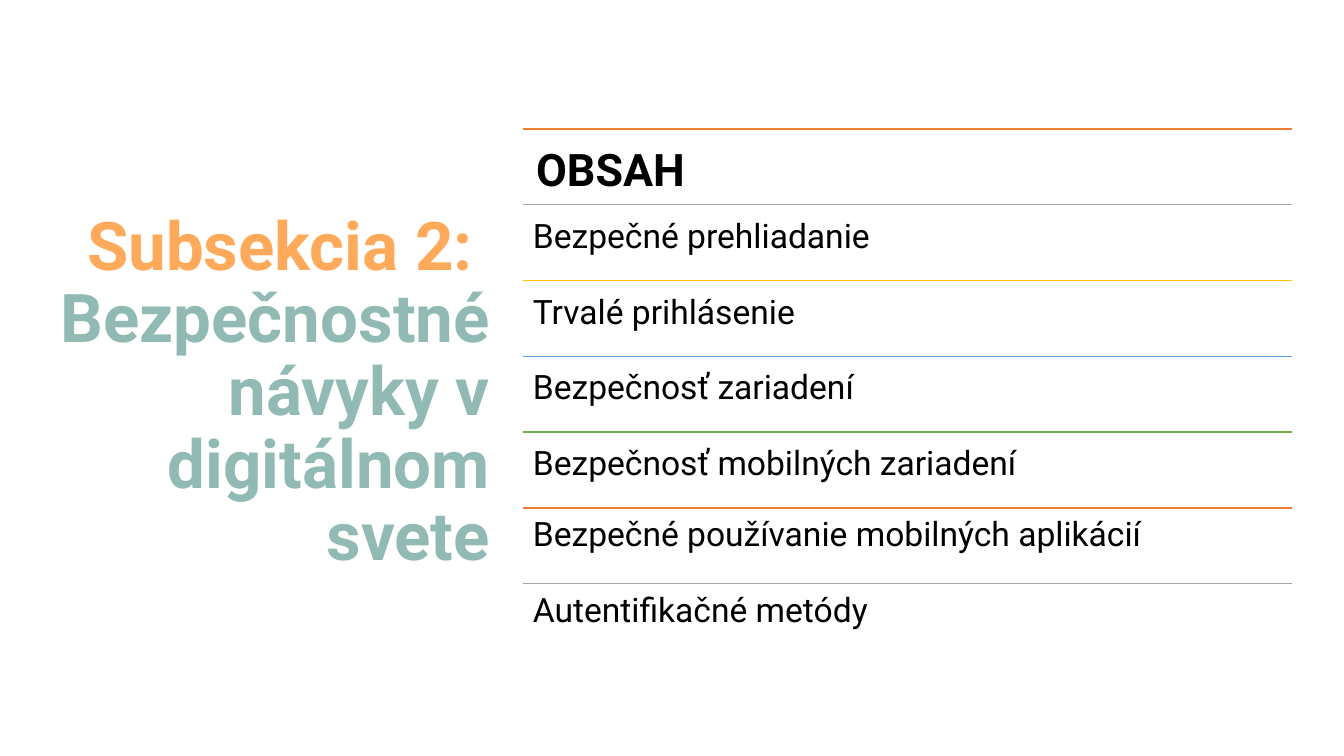
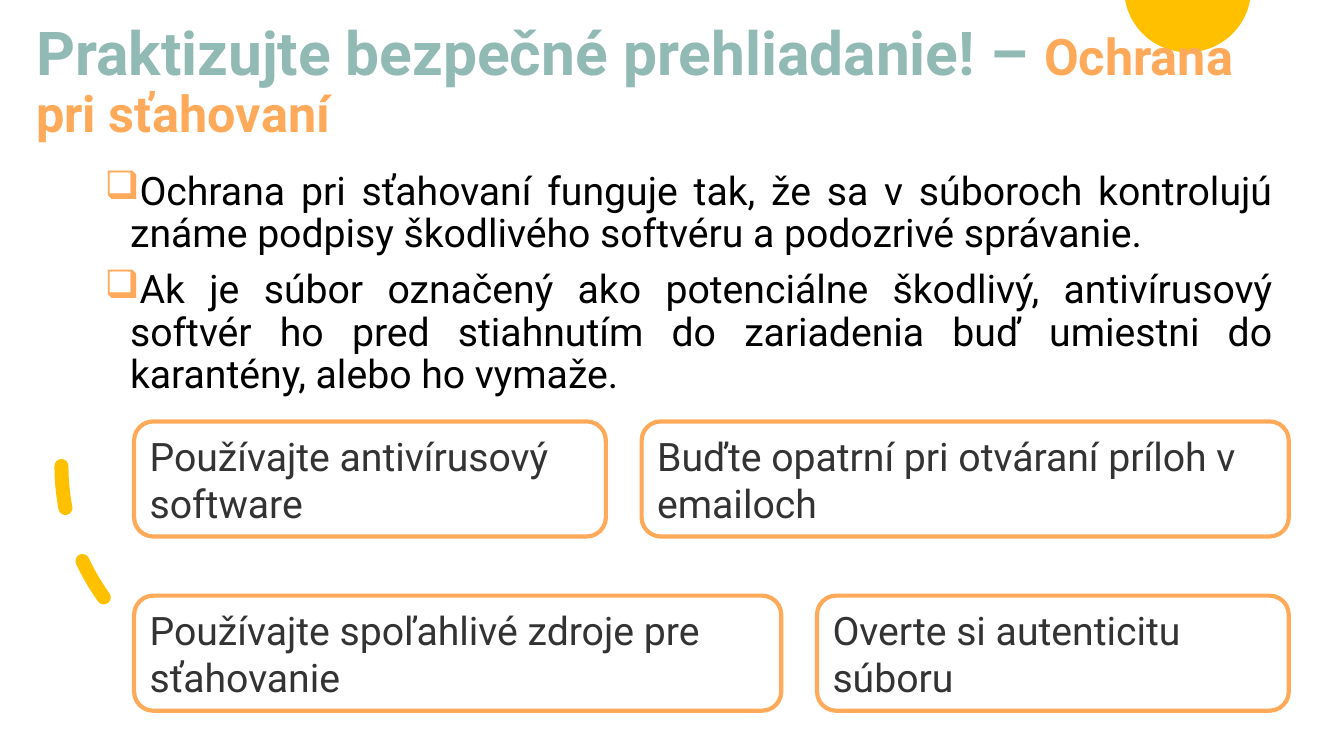
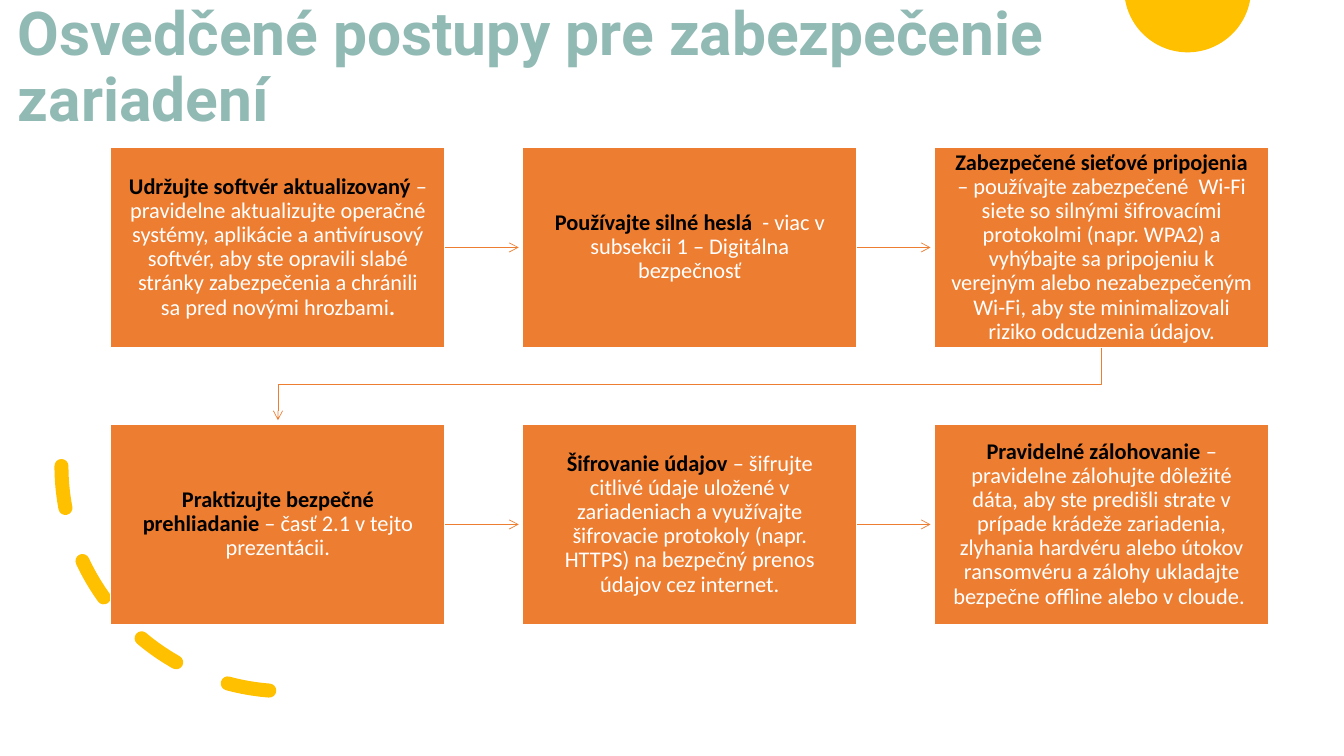
from math import cos, radians, sin

from lxml.etree import SubElement
from pptx import Presentation
from pptx.dml.color import RGBColor
from pptx.enum.dml import MSO_LINE
from pptx.enum.shapes import MSO_CONNECTOR, MSO_SHAPE
from pptx.enum.text import MSO_ANCHOR, MSO_AUTO_SIZE, PP_ALIGN
from pptx.oxml.ns import qn
from pptx.util import Cm, Pt

TEAL, PEACH, ORANGE, GOLD = "92BAB5", "FFAA5A", "ED7D31", "FFC000"
GREY, BLUE, GREEN = "A5A5A5", "5B9BD5", "70AD47"
BLACK, WHITE, CHARCOAL = "000000", "FFFFFF", "333333"

SLIDE_SIZE = (33.87, 19.05)
TITLE_LAYOUT = 5
TITLE_FORMAT = {"line_spacing": 0.9, "alignment": PP_ALIGN.LEFT}


def font(size, color, bold=False, name="Roboto"):
    """Describe the font of a run."""
    return {"name": name, "size": Pt(size), "bold": bold, "color": color}


TITLE = font(43.2, TEAL, True)
COVER_TITLE = font(48, TEAL, True)
TITLE_ACCENT = font(36, PEACH, True)
AGENDA_HEADING = font(32, BLACK, True)
AGENDA_ITEM = font(24, BLACK)
BODY = font(28, BLACK)
TIP = font(28, CHARCOAL)
STEP_NAME = font(16, BLACK, True, "Calibri")
STEP_TEXT = font(16, WHITE, False, "Calibri")
STEP_END = font(16, WHITE, True, "Calibri")

AGENDA = [
    ("OBSAH", ORANGE, 1),
    ("Bezpečné prehliadanie", GREY, 1),
    ("Trvalé prihlásenie", GOLD, 1),
    ("Bezpečnosť zariadení", BLUE, 1),
    ("Bezpečnosť mobilných zariadení", GREEN, 1),
    ("Bezpečné používanie mobilných aplikácií", ORANGE, 0.9),
    ("Autentifikačné metódy", GREY, 0.9),
]

DOWNLOAD_POINTS = [
    "Ochrana pri sťahovaní funguje tak, že sa v súboroch kontrolujú známe "
    "podpisy škodlivého softvéru a podozrivé správanie.",
    "Ak je súbor označený ako potenciálne škodlivý, antivírusový softvér ho "
    "pred stiahnutím do zariadenia buď umiestni do karantény, alebo ho vymaže.",
]

NARROW, WIDE = 11.89, 16.31
TIP_ROWS = [
    (10.62, [("Používajte antivírusový software", NARROW),
             ("Buďte opatrní pri otváraní príloh v emailoch", WIDE)]),
    (15.01, [("Používajte spoľahlivé zdroje pre sťahovanie", WIDE),
             ("Overte si autenticitu súboru", NARROW)]),
]

STEPS = [
    [("Udržujte softvér aktualizovaný ", STEP_NAME),
     ("– pravidelne aktualizujte operačné systémy, aplikácie a antivírusový "
      "softvér, aby ste opravili slabé stránky zabezpečenia a chránili sa "
      "pred novými hrozbami", STEP_TEXT),
     (".", STEP_END)],
    [("Používajte silné heslá  ", STEP_NAME),
     ("- viac v subsekcii 1 – Digitálna bezpečnosť", STEP_TEXT)],
    [("Zabezpečené sieťové pripojenia ", STEP_NAME),
     ("– používajte zabezpečené  Wi-Fi siete so silnými šifrovacími "
      "protokolmi (napr. WPA2) a vyhýbajte sa pripojeniu k verejným alebo "
      "nezabezpečeným Wi-Fi, aby ste minimalizovali riziko odcudzenia "
      "údajov.", STEP_TEXT)],
    [("Praktizujte bezpečné prehliadanie ", STEP_NAME),
     ("– časť 2.1 v tejto prezentácii.", STEP_TEXT)],
    [("Šifrovanie údajov ", STEP_NAME),
     ("– šifrujte citlivé údaje uložené v zariadeniach a využívajte "
      "šifrovacie protokoly (napr. HTTPS) na bezpečný prenos údajov cez "
      "internet.", STEP_TEXT)],
    [("Pravidelné zálohovanie ", STEP_NAME),
     ("–pravidelne zálohujte dôležité dáta, aby ste predišli strate v "
      "prípade krádeže zariadenia, zlyhania hardvéru alebo útokov ransomvéru "
      "a zálohy ukladajte bezpečne offline alebo v cloude. ", STEP_TEXT)],
]


def rgb(color):
    """Turn a hex string into a colour."""
    return RGBColor.from_string(color)


def apply(target, values):
    """Set every attribute named in a dict of format values."""
    for name, value in values.items():
        setattr(target, name, value)


def lengths(*values):
    """Turn numbers into centimetres."""
    return [Cm(value) for value in values]


def write(shape, paragraphs, paragraph_format, anchor=MSO_ANCHOR.TOP, insets=(0.25, 0.13)):
    """Fill a shape with paragraphs of (text, font) runs."""
    frame = shape.text_frame
    across, down = lengths(*insets)
    apply(frame, {
        "word_wrap": True, "auto_size": MSO_AUTO_SIZE.NONE, "vertical_anchor": anchor,
        "margin_left": across, "margin_right": across,
        "margin_top": down, "margin_bottom": down,
    })
    for index, runs in enumerate(paragraphs):
        paragraph = frame.add_paragraph() if index else frame.paragraphs[0]
        apply(paragraph, paragraph_format)
        for text, style in runs:
            run = paragraph.add_run()
            run.text = text.rstrip("\n")
            apply(run.font, {key: value for key, value in style.items() if key != "color"})
            run.font.color.rgb = rgb(style["color"])
            if text.endswith("\n"):
                paragraph.add_line_break()


def paint(shape, fill, line=None, width=1):
    """Give a shape its fill and outline, without a shadow."""
    shape.shadow.inherit = False
    if fill:
        shape.fill.solid()
        shape.fill.fore_color.rgb = rgb(fill)
    else:
        shape.fill.background()
    if line:
        shape.line.color.rgb = rgb(line)
        shape.line.width = Pt(width)
    else:
        shape.line.fill.background()


def add_box(slide, kind, place, fill, line, width):
    """Add a painted preset shape."""
    box = slide.shapes.add_shape(kind, *lengths(*place))
    paint(box, fill, line, width)
    return box


def add_line(slide, points, color, width, kind=MSO_CONNECTOR.STRAIGHT, arrow=False):
    """Add a connector, with an arrowhead at its end if wanted."""
    connector = slide.shapes.add_connector(kind, *lengths(*points))
    connector.line.color.rgb = rgb(color)
    connector.line.width = Pt(width)
    properties = connector.element.spPr
    if arrow:
        SubElement(properties.find(qn("a:ln")), qn("a:tailEnd"), type="arrow")
    SubElement(properties, qn("a:effectLst"))
    return connector


def add_title_slide(presentation, place, runs, paragraph_format=TITLE_FORMAT):
    """Add a slide and set its title."""
    slide = presentation.slides.add_slide(presentation.slide_layouts[TITLE_LAYOUT])
    title = slide.shapes.title
    apply(title, dict(zip(("left", "top", "width", "height"), lengths(*place))))
    write(title, [runs], paragraph_format, MSO_ANCHOR.MIDDLE)
    return slide


def add_decoration(slide):
    """Add the sun behind the title and the dashed arc."""
    center_x, center_y, radius = 29.93, -0.28, 1.6
    rim = [
        (Cm(center_x + radius * cos(radians(angle))),
         Cm(center_y + radius * sin(radians(angle))))
        for angle in range(10, 171, 4)
    ]
    builder = slide.shapes.build_freeform(*rim[0])
    builder.add_line_segments(rim[1:], close=True)
    sun = builder.convert_to_shape()
    paint(sun, GOLD)
    slide.shapes.title.element.addprevious(sun.element)

    arc = add_box(slide, MSO_SHAPE.ARC, (1.55, 6.07, 11.35, 11.35), None, GOLD, 10)
    arc.rotation = 90
    arc.line.dash_style = MSO_LINE.DASH
    arc.element.spPr.xfrm.flipV = True
    arc.element.spPr.find(qn("a:ln")).set("cap", "rnd")


def add_bullets(slide, place, points):
    """Add justified text with coloured square bullets."""
    box = slide.shapes.add_textbox(*lengths(*place))
    paragraph_format = {
        "alignment": PP_ALIGN.JUSTIFY, "line_spacing": 0.9, "space_before": Pt(10),
    }
    write(box, [[(point, BODY)] for point in points], paragraph_format)
    for paragraph in box.text_frame.paragraphs:
        properties = paragraph._p.get_or_add_pPr()
        properties.set("marL", str(Cm(0.64)))
        properties.set("indent", str(-Cm(0.64)))
        color = SubElement(properties, qn("a:buClr"))
        SubElement(color, qn("a:srgbClr"), val=PEACH)
        SubElement(properties, qn("a:buChar"), char="❑")


def build_agenda(presentation):
    """Build the section opener with its ruled list."""
    runs = [("Subsekcia 2: \n", {**COVER_TITLE, "color": PEACH}),
            ("Bezpečnostné návyky v digitálnom svete", COVER_TITLE)]
    slide = add_title_slide(presentation, (0.97, 2.16, 11.63, 15.52), runs,
                            {**TITLE_FORMAT, "alignment": PP_ALIGN.RIGHT})
    left, top, width, height = 13.18, 3.25, 19.38, 1.91
    for index, (text, color, spacing) in enumerate(AGENDA):
        row_top = top + index * height
        add_line(slide, (left, row_top, left + width, row_top), color, 1)
        row = slide.shapes.add_textbox(*lengths(left, row_top, width, height))
        style, inset = (AGENDA_ITEM, 0.25) if index else (AGENDA_HEADING, 0.33)
        write(row, [[(text, style)]], {"line_spacing": spacing}, insets=(inset, inset))


def build_downloads(presentation):
    """Build the slide on safe downloads."""
    runs = [("Praktizujte bezpečné prehliadanie! – ", TITLE),
            ("Ochrana pri sťahovaní", TITLE_ACCENT)]
    slide = add_title_slide(presentation, (0.66, 1.02, 30.89, 2.16), runs)
    add_decoration(slide)
    add_bullets(slide, (2.39, 4.19, 29.92, 6.78), DOWNLOAD_POINTS)
    for top, tips in TIP_ROWS:
        left = 3.38
        for text, width in tips:
            box = add_box(slide, MSO_SHAPE.ROUNDED_RECTANGLE, (left, top, width, 2.9),
                          WHITE, PEACH, 3)
            write(box, [[(text, TIP)]], {"alignment": PP_ALIGN.LEFT}, MSO_ANCHOR.MIDDLE)
            left += width + 0.9


def build_steps(presentation):
    """Build the flow of six good practices."""
    slide = add_title_slide(presentation, (0.2, 0.66, 26.54, 2.16),
                            [("Osvedčené postupy pre zabezpečenie zariadení", TITLE)])
    add_decoration(slide)
    columns, left, top = 3, 2.79, 3.71
    width, height, step_x, step_y = 8.43, 5.05, 10.38, 6.98
    arrow_length = step_x - width - 0.1
    for index, runs in enumerate(STEPS):
        row, column = divmod(index, columns)
        box_left, box_top = left + column * step_x, top + row * step_y
        box = add_box(slide, MSO_SHAPE.RECTANGLE, (box_left, box_top, width, height),
                      ORANGE, WHITE, 1)
        write(box, [runs], {"alignment": PP_ALIGN.CENTER, "line_spacing": 0.9},
              MSO_ANCHOR.MIDDLE, (0.41, 0.43))
        if column < columns - 1:
            start, middle = box_left + width, box_top + height / 2
            arrow = add_line(slide, (start, middle, start + arrow_length, middle),
                             ORANGE, 0.5, arrow=True)
            arrow.begin_connect(box, 3)

    drop, span = step_y - height - 0.1, (columns - 1) * step_x
    center_x = left + step_x + width / 2
    center_y = top + height + drop / 2
    turn = add_line(slide, (center_x - drop / 2, center_y - span / 2,
                            center_x + drop / 2, center_y + span / 2),
                    ORANGE, 0.5, MSO_CONNECTOR.ELBOW, True)
    turn.element.spPr.xfrm.rot = 90


def main():
    """Build and save the presentation."""
    presentation = Presentation()
    presentation.slide_width, presentation.slide_height = lengths(*SLIDE_SIZE)
    build_agenda(presentation)
    build_downloads(presentation)
    build_steps(presentation)
    presentation.save("out.pptx")


if __name__ == "__main__":
    main()
